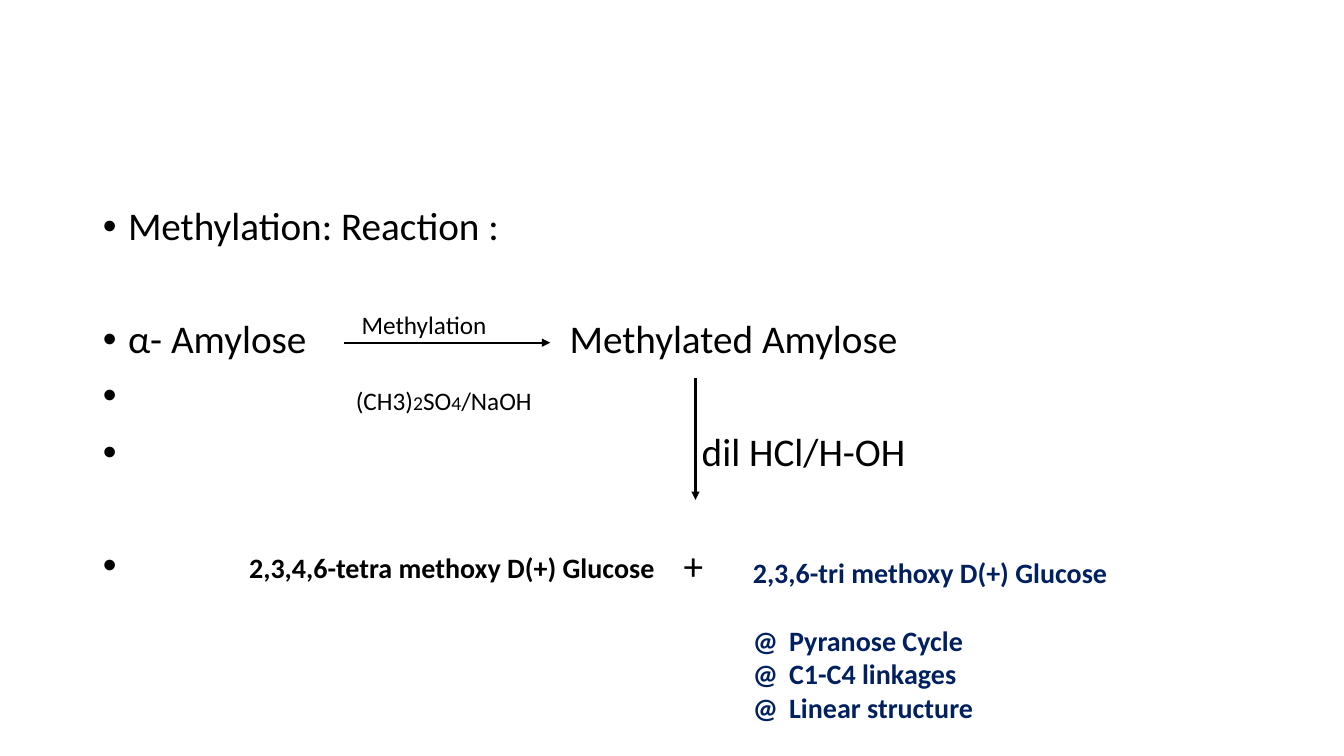
from dataclasses import dataclass

from lxml import etree
from pptx import Presentation
from pptx.dml.color import RGBColor
from pptx.enum.shapes import MSO_CONNECTOR
from pptx.enum.text import MSO_ANCHOR, MSO_AUTO_SIZE
from pptx.oxml.ns import qn
from pptx.util import Inches, Pt

STRAIGHT = MSO_CONNECTOR.STRAIGHT
TOP = MSO_ANCHOR.TOP
NO_FIT = MSO_AUTO_SIZE.NONE


@dataclass(frozen=True)
class Theme:
    """Hold the colours, font and type sizes of the slide."""
    font: str = "Calibri"
    ink: str = "000000"
    navy: str = "002060"
    body: int = 28
    product: int = 20
    reagent: int = 18
    index: int = 14
    line: float = 1.5
    gap: int = 10
    row: float = 40.75


class ReactionSlide:
    """Draw the elements of one reaction slide, placed in percent of its size."""

    def __init__(self, deck, theme):
        """Add a slide and keep only its body placeholder."""
        self.deck, self.theme = deck, theme
        self.page = deck.slides.add_slide(deck.slide_layouts[1])
        title = self.page.shapes.title
        title.element.getparent().remove(title.element)

    def across(self, share):
        """Turn a share of the width into a length."""
        return round(self.deck.slide_width * share / 100)

    def down(self, share):
        """Turn a share of the height into a length."""
        return round(self.deck.slide_height * share / 100)

    def area(self, left, top, width, height):
        """Turn four shares into a position and a size."""
        return self.across(left), self.down(top), self.across(width), self.down(height)

    def add_spans(self, para, spans, color, bold=False):
        """Add runs of text, each with its own size."""
        for text, size in spans:
            span = para.add_run()
            span.text = text
            span.font.name = self.theme.font
            span.font.size = Pt(size)
            span.font.bold = bold
            span.font.color.rgb = RGBColor.from_string(color)

    def tab(self, para, inches):
        """Set one left tab stop."""
        stops = etree.SubElement(para._p.get_or_add_pPr(), qn("a:tabLst"))
        etree.SubElement(stops, qn("a:tab"), pos=str(Inches(inches)), algn="l")

    def steps(self, area, rows):
        """Fill the body placeholder with bulleted reaction steps."""
        box = self.page.placeholders[1]
        box.left, box.top, box.width, box.height = self.area(*area)
        frame = box.text_frame
        frame.auto_size, frame.vertical_anchor = NO_FIT, TOP
        for number, (skipped, stop, spans) in enumerate(rows):
            para = frame.add_paragraph() if number else frame.paragraphs[0]
            para.line_spacing = 0.9
            para.space_before = Pt(self.theme.gap + skipped * self.theme.row)
            props = para._p.get_or_add_pPr()
            props.set("marL", str(Inches(0.25)))
            props.set("indent", str(Inches(-0.25)))
            etree.SubElement(props, qn("a:buFont"), typeface="Arial")
            etree.SubElement(props, qn("a:buChar"), char="•")
            if stop:
                self.tab(para, stop)
            self.add_spans(para, spans, self.theme.ink)

    def label(self, area, lines, size, color, bold=False, gap=0):
        """Add a text box; lines after the first align on a tab stop."""
        frame = self.page.shapes.add_textbox(*self.area(*area)).text_frame
        frame.word_wrap = True
        for number, text in enumerate(lines):
            para = frame.add_paragraph() if number else frame.paragraphs[0]
            if number == 1:
                para.space_before = Pt(gap)
            if number:
                self.tab(para, 0.36)
            self.add_spans(para, [(text, size)], color, bold)

    def arrow(self, left, top, right, bottom):
        """Draw a straight arrow."""
        line = self.page.shapes.add_connector(
            STRAIGHT, self.across(left), self.down(top), self.across(right), self.down(bottom))
        line.line.width = Pt(self.theme.line)
        line.line.color.rgb = RGBColor.from_string(self.theme.ink)
        etree.SubElement(line.line._get_or_add_ln(), qn("a:tailEnd"), type="triangle")
        etree.SubElement(line._element.spPr, qn("a:effectLst"))


def main():
    """Build and save the methylation slide."""
    deck = Presentation()
    deck.slide_width, deck.slide_height = Inches(13.33), Inches(7.5)
    theme = Theme()
    slide = ReactionSlide(deck, theme)
    big, mid, small = theme.body, theme.reagent, theme.index

    slide.steps((6.9, 26.67, 86.25, 63.5), [
        (0, None, [("Methylation: Reaction :", big)]),
        (1, 4.63, [("α- Amylose\tMethylated Amylose", big)]),
        (0, 2.51, [("\t", big), ("(CH3)", mid), ("2", small), ("SO", mid),
                   ("4", small), ("/NaOH", mid)]),
        (0, 5.94, [("\tdil HCl/H-OH", big)]),
        (1, 5.76, [("\t+", big)]),
    ])
    slide.arrow(25.6, 45.33, 40.95, 45.33)
    slide.label((26.17, 40.27, 14.55, 5.33), ["Methylation"], mid, theme.ink)
    slide.arrow(51.75, 50, 51.75, 66.13)
    slide.label((17.8, 72.13, 33.45, 5.87), ["2,3,4,6-tetra methoxy D(+) Glucose"],
                theme.product, theme.ink, bold=True)
    slide.label((55.28, 72.8, 29.7, 27.2), [
        "2,3,6-tri methoxy D(+) Glucose",
        "@\tPyranose Cycle",
        "@\tC1-C4 linkages",
        "@\tLinear structure",
    ], theme.product, theme.navy, bold=True, gap=24.4)
    deck.save("out.pptx")


if __name__ == "__main__":
    main()
